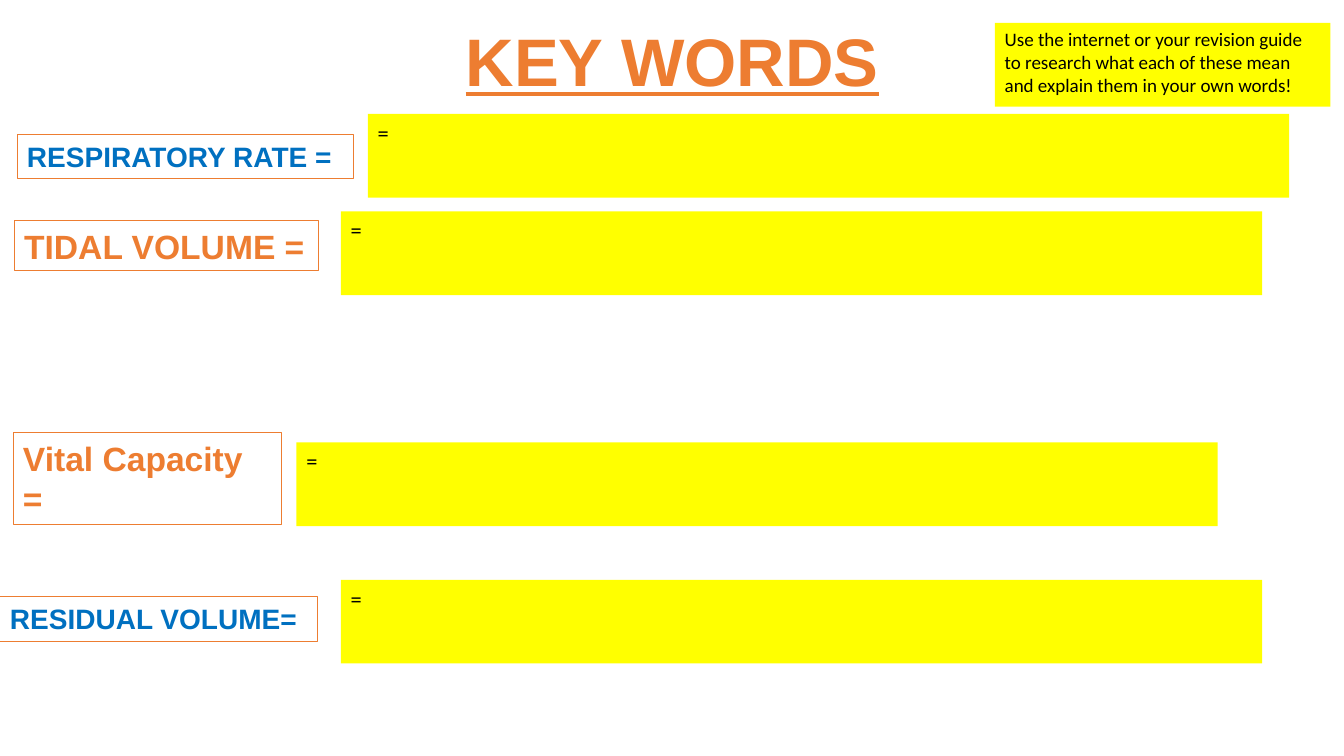
from dataclasses import dataclass

import pptx
import pptx.dml.color
import pptx.enum.shapes
import pptx.enum.text
import pptx.util
from pptx.util import Cm

COLORS = {
    "orange": "ED7D31",
    "blue": "0070C0",
    "yellow": "FFFF00",
    "black": "000000",
}
ANSWER_WIDTH, ANSWER_HEIGHT = 23.22, 2.11


@dataclass
class Box:
    """A rectangle with text; lengths in centimetres, size in points."""
    text: str
    left: float
    top: float
    width: float
    height: float
    size: float
    color: str = "black"
    font: str = "Calibri"
    bold: bool = False
    fill: str | None = None
    line: str | None = None


def term(text: str, left: float, top: float, width: float, height: float,
         size: float, color: str) -> Box:
    return Box(text, left, top, width, height, size, color, "Arial", True, line="orange")


def answer(left: float, top: float) -> Box:
    return Box("=", left, top, ANSWER_WIDTH, ANSWER_HEIGHT, 16, fill="yellow")


BOXES = [
    term("RESPIRATORY RATE =", 0.43, 3.38, 8.47, 1.12, 20, "blue"),
    term("TIDAL VOLUME =", 0.36, 5.56, 7.67, 1.27, 24, "orange"),
    term("Vital Capacity =", 0.33, 10.9, 6.76, 2.31, 24, "orange"),
    term("RESIDUAL VOLUME=", 0, 15.04, 8, 1.12, 20, "blue"),
    Box("Use the internet or your revision guide to research what each of these mean "
        "and explain them in your own words!", 25.07, 0.58, 8.46, 2.11, 13.6, fill="yellow"),
    answer(9.27, 2.87),
    answer(8.59, 5.33),
    answer(7.47, 11.15),
    answer(8.59, 14.61),
]


def rgb(name: str) -> pptx.dml.color.RGBColor:
    return pptx.dml.color.RGBColor.from_string(COLORS[name])


def add_run(p, text: str, size: float, color: str, font: str, bold: bool):
    r = p.add_run()
    r.text = text
    r.font.size = pptx.util.Pt(size)
    r.font.name = font
    r.font.bold = bold
    r.font.color.rgb = rgb(color)
    return r


def add_title(slide) -> None:
    sp = slide.shapes.title
    sp.left, sp.top, sp.width, sp.height = Cm(1.7), Cm(0.76), Cm(30.48), Cm(1.75)
    tf = sp.text_frame
    tf.auto_size = pptx.enum.text.MSO_AUTO_SIZE.NONE
    tf.vertical_anchor = pptx.enum.text.MSO_ANCHOR.MIDDLE
    p = tf.paragraphs[0]
    p.alignment = pptx.enum.text.PP_ALIGN.CENTER
    p.line_spacing = 0.9
    add_run(p, "KEY WORDS", 48, "orange", "Arial", True).font.underline = True


def add_box(slide, box: Box) -> None:
    sp = slide.shapes.add_shape(
        pptx.enum.shapes.MSO_SHAPE.RECTANGLE,
        Cm(box.left), Cm(box.top), Cm(box.width), Cm(box.height))
    sp.shadow.inherit = False
    if box.fill:
        sp.fill.solid()
        sp.fill.fore_color.rgb = rgb(box.fill)
    else:
        sp.fill.background()
    if box.line:
        sp.line.color.rgb = rgb(box.line)
        sp.line.width = pptx.util.Pt(0.75)
    else:
        sp.line.fill.background()
    tf = sp.text_frame
    tf.word_wrap = True
    tf.vertical_anchor = pptx.enum.text.MSO_ANCHOR.TOP
    p = tf.paragraphs[0]
    p.alignment = pptx.enum.text.PP_ALIGN.LEFT
    add_run(p, box.text, box.size, box.color, box.font, box.bold)


def main() -> None:
    prs = pptx.Presentation()
    prs.slide_width, prs.slide_height = Cm(33.87), Cm(19.05)
    slide = prs.slides.add_slide(prs.slide_layouts.get_by_name("Title Only"))
    add_title(slide)
    for box in BOXES:
        add_box(slide, box)
    prs.save("out.pptx")


if __name__ == "__main__":
    main()
